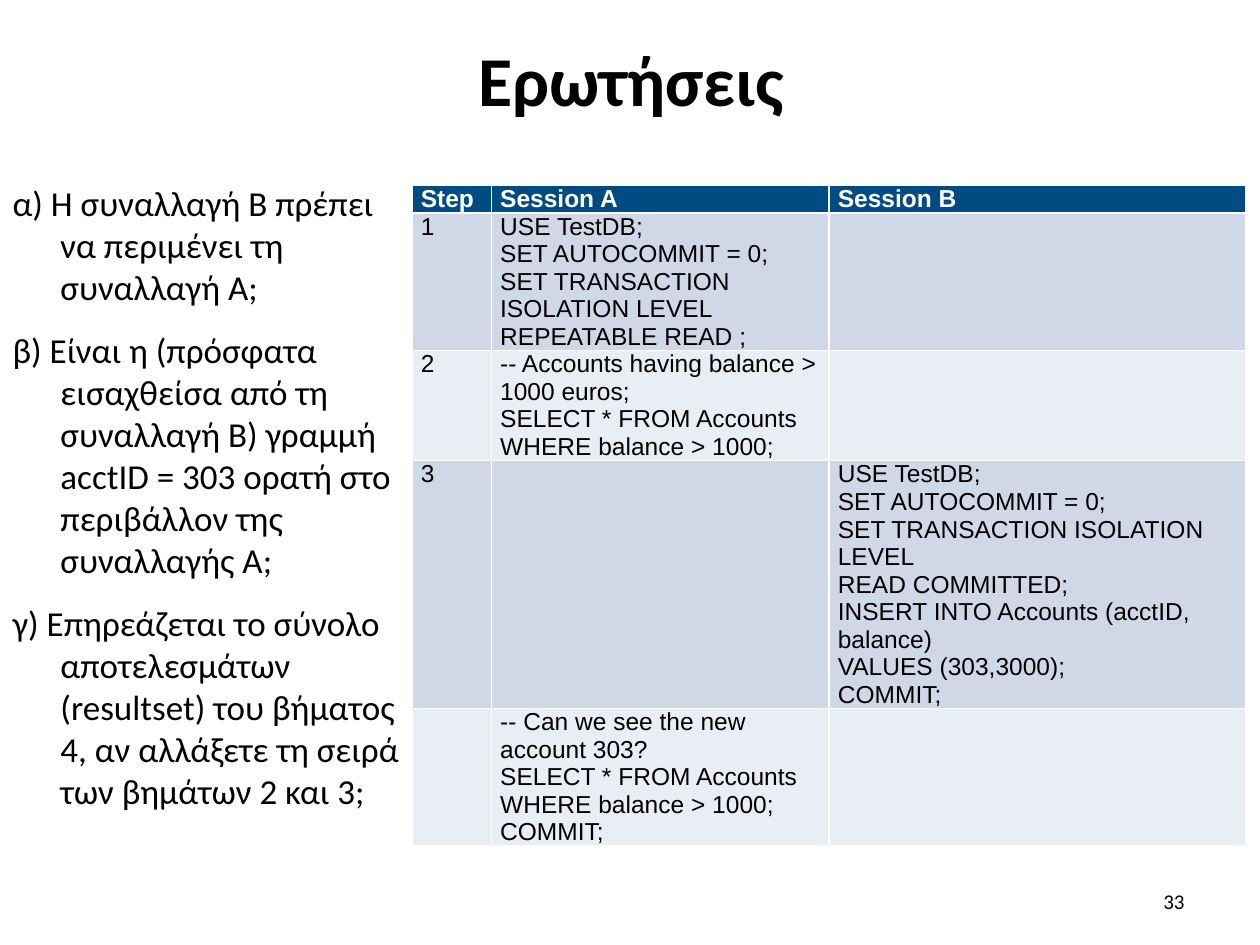
from dataclasses import dataclass

import pptx
import pptx.dml.color
import pptx.enum.text
import pptx.oxml
import pptx.util

ALIGN = pptx.enum.text.PP_ALIGN
ANCHOR = pptx.enum.text.MSO_ANCHOR
WIDTH, HEIGHT = pptx.util.Inches(10), pptx.util.Inches(7.5)


@dataclass(frozen=True)
class Style:
    font: str
    size: float
    color: str
    bold: bool = False


@dataclass(frozen=True)
class Theme:
    title: Style = Style("Calibri", 40, "000000", True)
    question: Style = Style("Calibri", 20, "000000")
    number: Style = Style("Calibri", 12, "000000")
    header: Style = Style("Arial", 14, "FFFFFF", True)
    code: Style = Style("Arial", 14, "000000")
    header_fill: str = "004B82"
    band_fills: tuple[str, str] = ("D0D8E8", "E9EDF4")


@dataclass(frozen=True)
class Area:
    """A rectangle in shares of the slide's width and height."""
    left: float
    top: float
    width: float
    height: float

    def lengths(self) -> tuple[int, int, int, int]:
        return (int(self.left * WIDTH), int(self.top * HEIGHT),
                int(self.width * WIDTH), int(self.height * HEIGHT))


@dataclass(frozen=True)
class Step:
    number: str
    height: float  # share of the slide's height
    session_a: tuple[str, ...] = ()
    session_b: tuple[str, ...] = ()


THEME = Theme()
TITLE_AREA = Area(0.051, 0.017, 0.9, 0.132)
QUESTIONS_AREA = Area(0, 0.185, 0.335, 0.724)
TABLE_AREA = Area(0.327, 0.196, 0.662, 0.7)
NUMBER_AREA = Area(0.717, 0.927, 0.233, 0.053)
COLUMN_SHARES = (0.063, 0.268, 0.331)
HEADER_HEIGHT = 0.02
HEADINGS = ("Step", "Session A", "Session B")

QUESTIONS = (
    "α) Η συναλλαγή Β πρέπει να περιμένει τη συναλλαγή Α;",
    "β) Είναι η (πρόσφατα εισαχθείσα από τη συναλλαγή Β) γραμμή "
    "acctID = 303 ορατή στο περιβάλλον της συναλλαγής Α;",
    "γ) Επηρεάζεται το σύνολο αποτελεσμάτων (resultset) του βήματος 4, "
    "αν αλλάξετε τη σειρά των βημάτων 2 και 3;",
)
SETUP = ("USE TestDB;", "SET AUTOCOMMIT = 0;", "SET TRANSACTION ISOLATION LEVEL")
QUERY = ("SELECT * FROM Accounts", "WHERE balance > 1000;")
STEPS = (
    Step("1", 0.13, session_a=SETUP + ("REPEATABLE READ ;",)),
    Step("2", 0.11, session_a=("-- Accounts having balance > 1000 euros;",) + QUERY),
    Step("3", 0.24, session_b=SETUP + (
        "READ COMMITTED;", "INSERT INTO Accounts (acctID, balance)",
        "VALUES (303,3000);", "COMMIT;")),
    Step("", 0.14, session_a=("-- Can we see the new account 303?",) + QUERY + ("COMMIT;",)),
)


def place(shape, area: Area) -> None:
    shape.left, shape.top, shape.width, shape.height = area.lengths()


def write(frame, lines: tuple[str, ...], style: Style, align=ALIGN.LEFT) -> None:
    """Fill a text frame with one paragraph per line."""
    for index, line in enumerate(lines):
        paragraph = frame.add_paragraph() if index else frame.paragraphs[0]
        paragraph.alignment = align
        run = paragraph.add_run()
        run.text = line
        run.font.name = style.font
        run.font.size = pptx.util.Pt(style.size)
        run.font.bold = style.bold
        run.font.color.rgb = pptx.dml.color.RGBColor.from_string(style.color)


def hang(paragraph, indent: int) -> None:
    """Give a paragraph a hanging indent without a bullet."""
    properties = paragraph._p.get_or_add_pPr()
    properties.set("marL", str(indent))
    properties.set("indent", str(-indent))
    properties.append(pptx.oxml.parse_xml(
        '<a:buNone xmlns:a="http://schemas.openxmlformats.org/drawingml/2006/main"/>'))


def add_title(slide) -> None:
    title = slide.shapes.title
    place(title, TITLE_AREA)
    title.text_frame.vertical_anchor = ANCHOR.MIDDLE
    write(title.text_frame, ("Ερωτήσεις",), THEME.title, ALIGN.CENTER)


def add_questions(slide) -> None:
    questions = slide.placeholders[1]
    place(questions, QUESTIONS_AREA)
    frame = questions.text_frame
    frame.auto_size = pptx.enum.text.MSO_AUTO_SIZE.NONE
    write(frame, QUESTIONS, THEME.question)
    for paragraph in frame.paragraphs:
        paragraph.space_before = paragraph.space_after = pptx.util.Pt(6)
        hang(paragraph, pptx.util.Inches(0.38))


def fill_cell(cell, lines: tuple[str, ...], style: Style, fill: str) -> None:
    cell.fill.solid()
    cell.fill.fore_color.rgb = pptx.dml.color.RGBColor.from_string(fill)
    cell.margin_left = cell.margin_right = pptx.util.Inches(0.07)
    cell.margin_top = cell.margin_bottom = 0
    write(cell.text_frame, lines, style)


def add_sessions(slide) -> None:
    sessions = slide.shapes.add_table(
        len(STEPS) + 1, len(HEADINGS), *TABLE_AREA.lengths()).table
    for column, share in zip(sessions.columns, COLUMN_SHARES):
        column.width = int(share * WIDTH)
    heights = (HEADER_HEIGHT, *(step.height for step in STEPS))
    for row, share in zip(sessions.rows, heights):
        row.height = int(share * HEIGHT)
    for column, heading in enumerate(HEADINGS):
        fill_cell(sessions.cell(0, column), (heading,), THEME.header, THEME.header_fill)
    for row, step in enumerate(STEPS, start=1):
        number = (step.number,) if step.number else ()
        fill = THEME.band_fills[(row - 1) % 2]
        for column, lines in enumerate((number, step.session_a, step.session_b)):
            fill_cell(sessions.cell(row, column), lines, THEME.code, fill)


def add_slide_number(slide) -> None:
    frame = slide.shapes.add_textbox(*NUMBER_AREA.lengths()).text_frame
    frame.word_wrap = True
    frame.vertical_anchor = ANCHOR.MIDDLE
    write(frame, ("33",), THEME.number, ALIGN.RIGHT)


def main() -> None:
    deck = pptx.Presentation()
    deck.slide_width, deck.slide_height = WIDTH, HEIGHT
    slide = deck.slides.add_slide(deck.slide_layouts[1])
    add_title(slide)
    add_questions(slide)
    add_sessions(slide)
    add_slide_number(slide)
    deck.save("out.pptx")


if __name__ == "__main__":
    main()
